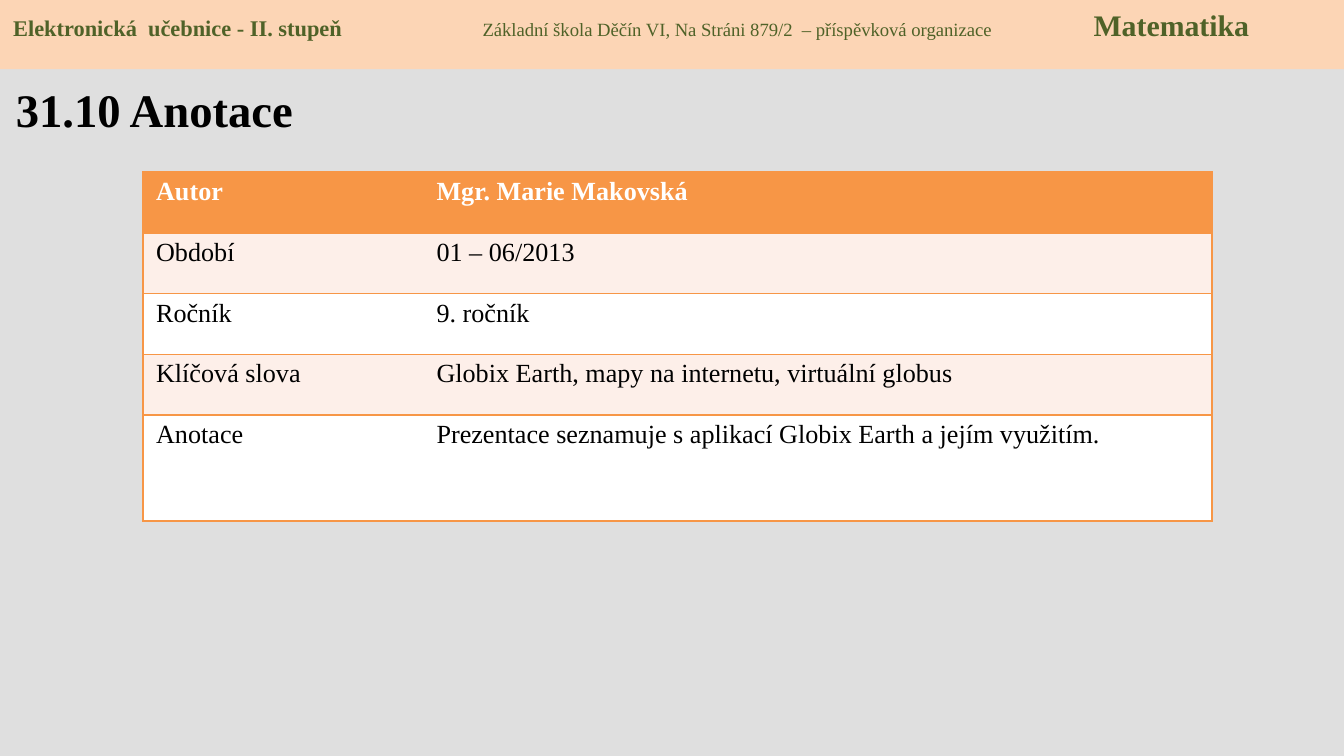
from lxml import etree
from pptx import Presentation
from pptx.dml.color import RGBColor
from pptx.enum import shapes, text
from pptx.oxml import ns
from pptx.util import Cm, Pt

FONT = "Times New Roman"
COLORS = {
    "background": "DFDFDF", "banner": "FCD5B5", "banner_text": "4F6228",
    "accent": "F79646", "band": "FDEFE9", "white": "FFFFFF", "black": "000000",
}
TITLE = "31.10 Anotace"
# text, size, bold, tab stop in cm (None at the line start)
BANNER = [
    ("Elektronická  učebnice - II. stupeň", 12, True, None),
    ("Základní škola Děčín VI, Na Stráni 879/2  – příspěvková organizace", 10, False, 8.87),
    ("Matematika", 16, True, 20.42),
]
ROWS = [
    ("Autor", "Mgr. Marie Makovská"),
    ("Období", "01 – 06/2013"),
    ("Ročník", "9. ročník"),
    ("Klíčová slova", "Globix Earth, mapy na internetu, virtuální globus"),
    ("Anotace", "Prezentace seznamuje s aplikací Globix Earth a jejím využitím."),
]
COLUMN_WIDTHS = (5.3, 14.9)
ROW_HEIGHTS = (1.15,) * 4 + (2,)


def color(name):
    return RGBColor.from_string(COLORS[name])


def fill_solid(fill, name):
    fill.solid()
    fill.fore_color.rgb = color(name)


def add_span(para, words, size, name, bold=False):
    span = para.add_run()
    span.text = words
    span.font.name, span.font.size, span.font.bold = FONT, Pt(size), bold
    span.font.color.rgb = color(name)


def add_borders(cell, sides):
    """Draw accent lines on the given sides and none on the others."""
    properties = cell._tc.get_or_add_tcPr()
    for index, side in enumerate("LRTB"):
        line = etree.Element(ns.qn(f"a:ln{side}"), w=str(Pt(1)))
        if side in sides:
            solid = etree.SubElement(line, ns.qn("a:solidFill"))
            etree.SubElement(solid, ns.qn("a:srgbClr"), val=COLORS["accent"])
        else:
            etree.SubElement(line, ns.qn("a:noFill"))
        properties.insert(index, line)


def add_title(page):
    box = page.shapes.add_textbox(Cm(0.05), Cm(1.3), Cm(8.1), Cm(1.25))
    frame = box.text_frame
    frame.word_wrap = True
    frame.margin_top, frame.margin_bottom = Cm(0.23), 0
    add_span(frame.paragraphs[0], TITLE, 25, "black", True)


def add_annotation_table(page):
    table = page.shapes.add_table(
        len(ROWS), len(COLUMN_WIDTHS), Cm(2.7), Cm(3.25),
        Cm(sum(COLUMN_WIDTHS)), Cm(sum(ROW_HEIGHTS))).table
    for column, width in zip(table.columns, COLUMN_WIDTHS):
        column.width = Cm(width)
    for r, (words, height) in enumerate(zip(ROWS, ROW_HEIGHTS)):
        table.rows[r].height = Cm(height)
        fill = "accent" if r == 0 else "band" if r % 2 else "white"
        for c, value in enumerate(words):
            cell = table.cell(r, c)
            cell.margin_left = cell.margin_right = Cm(0.25)
            cell.margin_top = cell.margin_bottom = Cm(0.1)
            fill_solid(cell.fill, fill)
            add_borders(cell, "RTB" if c else "LTB")
            add_span(cell.text_frame.paragraphs[0], value, 14,
                     "black" if r else "white", r == 0)


def add_banner(page):
    banner = page.shapes.add_shape(
        shapes.MSO_SHAPE.RECTANGLE, 0, Cm(-0.05), deck.slide_width, Cm(1.36))
    banner.shadow.inherit = False
    fill_solid(banner.fill, "banner")
    banner.line.fill.background()
    frame = banner.text_frame
    frame.word_wrap = True
    frame.vertical_anchor = text.MSO_ANCHOR.TOP
    frame.margin_top = Cm(0.17)
    para = frame.paragraphs[0]
    para.alignment = text.PP_ALIGN.LEFT
    stops = etree.SubElement(para._p.get_or_add_pPr(), ns.qn("a:tabLst"))
    for words, size, bold, stop in BANNER:
        if stop:
            etree.SubElement(stops, ns.qn("a:tab"), pos=str(Cm(stop)), algn="l")
            words = "\t" + words
        add_span(para, words, size, "banner_text", bold)


deck = Presentation()
deck.slide_width, deck.slide_height = Cm(25.4), Cm(14.29)
page = deck.slides.add_slide(deck.slide_layouts[6])
fill_solid(page.background.fill, "background")
add_title(page)
add_annotation_table(page)
add_banner(page)
deck.save("out.pptx")
